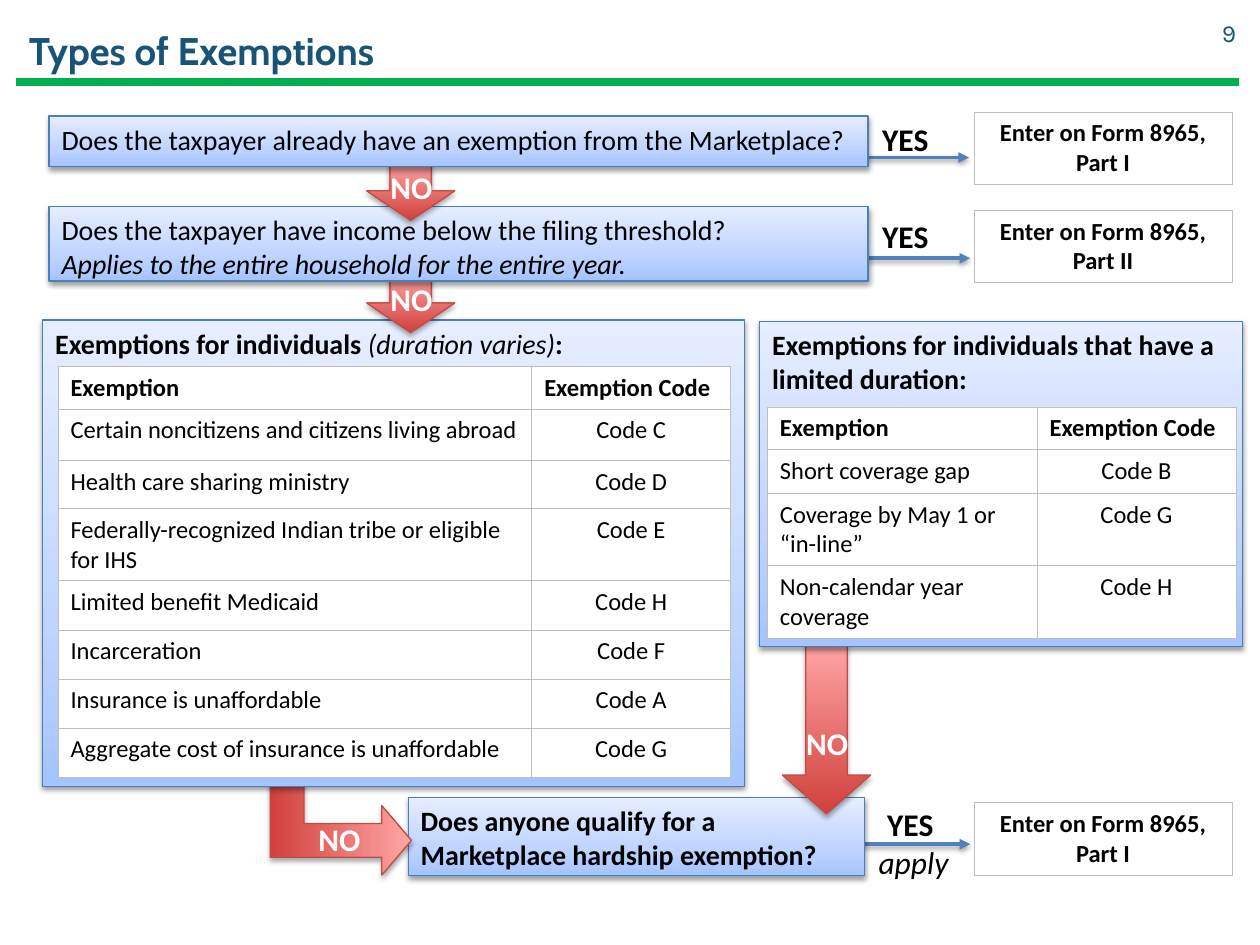
from lxml import etree
from pptx import Presentation
from pptx import util as u
from pptx.dml.color import RGBColor
from pptx.enum import shapes, text
from pptx.oxml.ns import qn

Inches, Pt = u.Inches, u.Pt
color = RGBColor.from_string
KINDS = shapes.MSO_SHAPE
LEFT, CENTER, RIGHT = text.PP_ALIGN.LEFT, text.PP_ALIGN.CENTER, text.PP_ALIGN.RIGHT
TOP, MIDDLE = text.MSO_ANCHOR.TOP, text.MSO_ANCHOR.MIDDLE


def write(tf, paragraphs, size, hex_color="000000", font="Calibri", align=LEFT):
    """Fill tf; a paragraph is a list of (text, style), style holding b and/or i."""
    for n, runs in enumerate(paragraphs):
        p = tf.add_paragraph() if n else tf.paragraphs[0]
        p.alignment = align
        for words, style in runs:
            r = p.add_run()
            r.text = words
            r.font.name, r.font.size = font, Pt(size)
            r.font.bold, r.font.italic = "b" in style, "i" in style
            r.font.color.rgb = color(hex_color)


def add_shadow(sp, alpha=38, distance=1.6):
    effects = etree.SubElement(sp._element.spPr, qn("a:effectLst"))
    outer = etree.SubElement(effects, qn("a:outerShdw"), blurRad=str(Pt(3.1)),
                             dist=str(Pt(distance)), dir="5400000", rotWithShape="0")
    black = etree.SubElement(outer, qn("a:srgbClr"), val="000000")
    etree.SubElement(black, qn("a:alpha"), val=str(alpha * 1000))


prs = Presentation()
prs.slide_width, prs.slide_height = Inches(10), Inches(7.5)
s = prs.slides.add_slide(prs.slide_layouts[5])

# Title and rule
title = s.shapes.title
title.left, title.top, title.width, title.height = map(Inches, (0.13, 0.11, 9, 0.57))
title.text_frame.vertical_anchor = MIDDLE
title.text_frame.auto_size = text.MSO_AUTO_SIZE.NONE
write(title.text_frame, [[("Types of Exemptions", "b")]], 22, "175475", "Cabin")

rule = s.shapes.add_connector(shapes.MSO_CONNECTOR.STRAIGHT,
                              Inches(0.13), Inches(0.65), Inches(9.83), Inches(0.65))
rule.line.color.rgb = color("00B050")
rule.line.width = Pt(4.75)
etree.SubElement(rule._element.spPr, qn("a:effectLst"))

# YES arrows
for x, y in [(6.49, 1.25), (6.5, 2.05), (6.5, 6.7)]:
    arrow = s.shapes.add_connector(shapes.MSO_CONNECTOR.STRAIGHT,
                                   Inches(x), Inches(y), Inches(x + 1.2), Inches(y))
    arrow.line.color.rgb = color("4F81BD")
    arrow.line.width = Pt(2)
    etree.SubElement(arrow.line._get_or_add_ln(), qn("a:tailEnd"), type="triangle")
    add_shadow(arrow)

# Question boxes and NO arrows, back to front
BLUE = dict(stops=[(0, "A4C4FF"), (35, "BFD4FF"), (100, "E6EEFF")],
            line="4B7EBC", alpha=38, distance=1.6)
RED = dict(stops=[(0, "D1403C"), (100, "FFA6A5")],
           line="BF4C48", alpha=35, distance=1.8)
BOX, DOWN, BENT = KINDS.RECTANGLE, KINDS.DOWN_ARROW, KINDS.BENT_UP_ARROW
flow = [
    (BOX, (3.24, 6.33, 3.62, 0.62), [],
     [[("Does anyone qualify for a Marketplace hardship exemption?", "b")]]),
    (BENT, (2.3, 5.98, 0.81, 1.12), [0.33, 0.34, 0.29], []),
    (BOX, (0.34, 2.54, 5.57, 3.7), [],
     [[("Exemptions for individuals ", "b"), ("(duration varies)", "i"), (":", "b")]]),
    (DOWN, (2.91, 2.17, 0.7, 0.47), [0.47, 0.5], []),
    (BOX, (0.39, 1.64, 6.5, 0.59), [],
     [[("Does the taxpayer have income below the filing threshold?", "")],
      [("Applies to the entire household for the entire year.", "i")]]),
    (DOWN, (2.91, 1.28, 0.7, 0.47), [0.47, 0.5], []),
    (DOWN, (6.21, 5.1, 0.7, 1.36), [0.47, 0.44], []),
    (BOX, (6.03, 2.55, 3.83, 2.58), [],
     [[("Exemptions for individuals that have a limited duration:", "b")]]),
    (BOX, (0.39, 0.92, 6.5, 0.4), [],
     [[("Does the taxpayer already have an exemption from the Marketplace?", "")]]),
]
for kind, place, adjustments, paragraphs in flow:
    look = BLUE if kind == BOX else RED
    sp = s.shapes.add_shape(kind, *map(Inches, place))
    for n, value in enumerate(adjustments):
        sp.adjustments[n] = value
    sp.rotation = 90 if kind == BENT else 0
    sp.fill.gradient()
    sp.fill.gradient_angle = 90
    stop_list = sp._element.spPr.find(qn("a:gradFill")).find(qn("a:gsLst"))
    for stop in list(stop_list):
        stop_list.remove(stop)
    for percent, hex_color in look["stops"]:
        stop = etree.SubElement(stop_list, qn("a:gs"), pos=str(percent * 1000))
        etree.SubElement(stop, qn("a:srgbClr"), val=hex_color)
    sp.line.color.rgb = color(look["line"])
    sp.line.width = Pt(0.75)
    add_shadow(sp, look["alpha"], look["distance"])
    sp.text_frame.word_wrap = True
    sp.text_frame.vertical_anchor = TOP
    write(sp.text_frame, paragraphs, 16)

# Tables: place, column widths, row heights, rows
answer_cols, answer_rows = [2.05], [0.57]
tables = [
    ((0.46, 2.91), [3.76, 1.58], [0.33, 0.41, 0.38, 0.57] + [0.39] * 4, [
        ("Exemption", "Exemption Code"),
        ("Certain noncitizens and citizens living abroad", "Code C"),
        ("Health care sharing ministry", "Code D"),
        ("Federally-recognized Indian tribe or eligible for IHS", "Code E"),
        ("Limited benefit Medicaid", "Code H"),
        ("Incarceration", "Code F"),
        ("Insurance is unaffordable", "Code A"),
        ("Aggregate cost of insurance is unaffordable", "Code G")]),
    ((6.09, 3.23), [2.14, 1.58], [0.33, 0.35, 0.57, 0.57], [
        ("Exemption", "Exemption Code"),
        ("Short coverage gap", "Code B"),
        ("Coverage by May 1 or “in-line”", "Code G"),
        ("Non-calendar year coverage", "Code H")]),
    ((7.73, 0.89), answer_cols, answer_rows, [("Enter on Form 8965, Part I",)]),
    ((7.73, 1.67), answer_cols, answer_rows, [("Enter on Form 8965, Part II",)]),
    ((7.73, 6.37), answer_cols, answer_rows, [("Enter on Form 8965, Part I",)]),
]
for (x, y), widths, heights, rows in tables:
    table = s.shapes.add_table(len(rows), len(widths), Inches(x), Inches(y),
                               Inches(sum(widths)), Inches(sum(heights))).table
    table.first_row = table.horz_banding = False
    for column, width in zip(table.columns, widths):
        column.width = Inches(width)
    for i, (row, height) in enumerate(zip(rows, heights)):
        table.rows[i].height = Inches(height)
        for j, words in enumerate(row):
            cell = table.cell(i, j)
            cell.vertical_anchor = TOP if i else MIDDLE
            centered = len(row) == 1 or (i and j)
            write(cell.text_frame, [[(words, "" if i else "b")]], 14,
                  align=CENTER if centered else LEFT)
            for side in ("a:lnL", "a:lnR", "a:lnT", "a:lnB"):
                ln = etree.SubElement(cell._tc.get_or_add_tcPr(), qn(side), w=str(Pt(0.5)))
                fill = etree.SubElement(ln, qn("a:solidFill"))
                etree.SubElement(fill, qn("a:srgbClr"), val="BFBFBF")
            cell.fill.solid()
            cell.fill.fore_color.rgb = color("FFFFFF")

# Arrow labels and page number
WHITE, BLACK = "FFFFFF", "000000"
labels = [
    ("NO", (2.98, 1.31, 0.57, 0.35), "b", 18, WHITE, "Calibri", CENTER),
    ("NO", (2.98, 2.2, 0.57, 0.35), "b", 18, WHITE, "Calibri", CENTER),
    ("NO", (6.28, 5.69, 0.57, 0.41), "b", 18, WHITE, "Calibri", CENTER),
    ("NO", (2.41, 6.48, 0.57, 0.35), "b", 18, WHITE, "Calibri", CENTER),
    ("YES", (6.9, 0.93, 0.57, 0.35), "b", 18, BLACK, "Calibri", CENTER),
    ("YES", (6.9, 1.7, 0.57, 0.35), "b", 18, BLACK, "Calibri", CENTER),
    ("YES", (6.94, 6.36, 0.57, 0.35), "b", 18, BLACK, "Calibri", CENTER),
    ("apply", (6.8, 6.66, 0.9, 0.36), "i", 18, BLACK, "Calibri", CENTER),
    ("9", (9.3, 0.06, 0.51, 0.4), "", 14, "175475", "Karla", RIGHT),
]
for words, place, style, size, hex_color, font, align in labels:
    tf = s.shapes.add_textbox(*map(Inches, place)).text_frame
    tf.word_wrap = True
    tf.vertical_anchor = MIDDLE
    tf.margin_left = tf.margin_right = tf.margin_top = tf.margin_bottom = 0
    write(tf, [[(words, style)]], size, hex_color, font, align)

prs.save("out.pptx")
